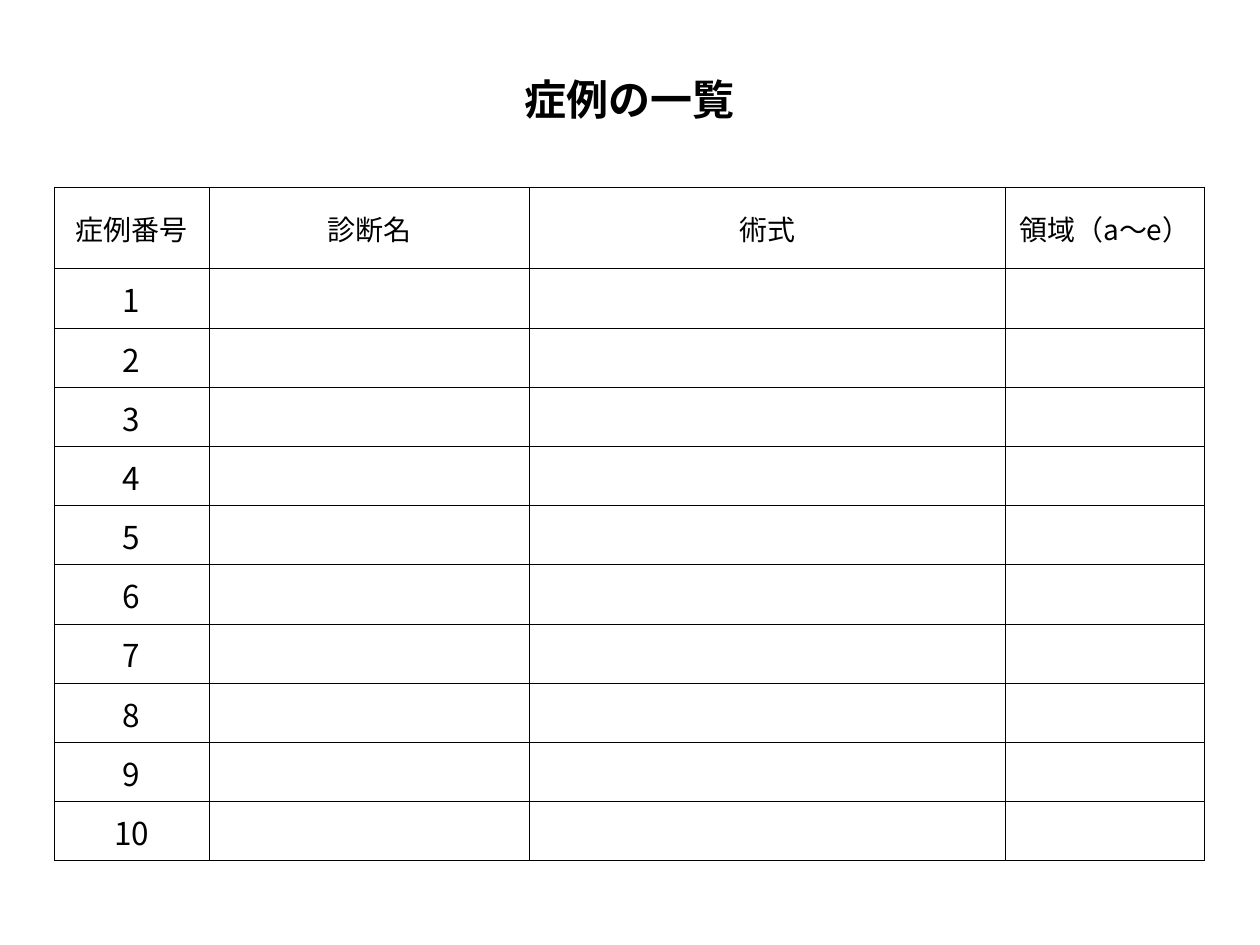
from dataclasses import dataclass

from lxml import etree
from pptx import Presentation
from pptx.dml.color import RGBColor
from pptx.enum.lang import MSO_LANGUAGE_ID
from pptx.enum.text import MSO_ANCHOR, PP_ALIGN
from pptx.oxml.ns import qn
from pptx.util import Inches, Pt

BLACK = RGBColor(0x00, 0x00, 0x00)
FONT_NAME = "Noto Sans CJK JP"
JAPANESE = MSO_LANGUAGE_ID.JAPANESE
CENTER = PP_ALIGN.CENTER
MIDDLE = MSO_ANCHOR.MIDDLE

TITLE = "症例の一覧"
CASE_COUNT = 10
ROW_HEIGHT = 0.47
TITLE_ROW, GAP_ROW, HEADER_ROW = range(3)
ROW_COUNT = HEADER_ROW + 1 + CASE_COUNT
BORDER_SIDES = ("L", "R", "T", "B")


@dataclass(frozen=True)
class Column:
    heading: str
    width: float


COLUMNS = (
    Column("症例番号", 1.23),
    Column("診断名", 2.54),
    Column("術式", 3.78),
    Column("領域（a〜e）", 1.58),
)


def write_cell(cell, text: str, size: int, bold: bool = False) -> None:
    """Put centred text into a cell with narrow margins."""
    cell.margin_left = cell.margin_right = cell.margin_top = Inches(0.01)
    cell.margin_bottom = 0
    cell.vertical_anchor = MIDDLE
    cell.text_frame.text = text
    paragraph = cell.text_frame.paragraphs[0]
    paragraph.alignment = CENTER
    font = paragraph.runs[0].font
    font.name = FONT_NAME
    font.size = Pt(size)
    font.bold = bold
    font.color.rgb = BLACK
    font.language_id = JAPANESE
    properties = paragraph.runs[0]._r.get_or_add_rPr()
    latin = properties.find(qn("a:latin"))
    east_asian = etree.Element(qn("a:ea"), typeface=FONT_NAME)
    latin.addnext(east_asian)


def set_borders(cell, visible_sides: str) -> None:
    """Draw thin lines on the named sides and none on the others."""
    properties = cell._tc.get_or_add_tcPr()
    for position, side in enumerate(BORDER_SIDES):
        line = etree.Element(qn(f"a:ln{side}"), w=str(Pt(0.5)))
        if side in visible_sides:
            fill = etree.SubElement(line, qn("a:solidFill"))
            etree.SubElement(fill, qn("a:srgbClr"), val=str(BLACK))
        else:
            etree.SubElement(line, qn("a:noFill"))
        properties.insert(position, line)


def visible_sides(row_index: int) -> str:
    if row_index == TITLE_ROW:
        return ""
    return "B" if row_index == GAP_ROW else "LRTB"


def add_case_table(slide) -> None:
    width = sum(column.width for column in COLUMNS)
    frame = slide.shapes.add_table(
        ROW_COUNT, len(COLUMNS), Inches(0.43), Inches(0.52),
        Inches(width), Inches(ROW_HEIGHT * ROW_COUNT),
    )
    table = frame.table
    table.first_row = False
    table.horz_banding = False

    # Grid
    for table_column, column in zip(table.columns, COLUMNS):
        table_column.width = Inches(column.width)
    for row_index, row in enumerate(table.rows):
        row.height = Inches(ROW_HEIGHT)
        for cell in row.cells:
            cell.fill.background()
            set_borders(cell, visible_sides(row_index))

    # Title across all columns
    title_cell = table.cell(TITLE_ROW, 0)
    title_cell.merge(table.cell(TITLE_ROW, len(COLUMNS) - 1))
    write_cell(title_cell, TITLE, 24, bold=True)

    # Headings and case numbers
    for column_index, column in enumerate(COLUMNS):
        write_cell(table.cell(HEADER_ROW, column_index), column.heading, 16)
    for number in range(1, CASE_COUNT + 1):
        write_cell(table.cell(HEADER_ROW + number, 0), str(number), 18)


def main() -> None:
    presentation = Presentation()
    presentation.slide_width = Inches(10)
    presentation.slide_height = Inches(7.5)
    # The title is a table cell, so the blank layout is used
    slide = presentation.slides.add_slide(presentation.slide_layouts[6])
    add_case_table(slide)
    presentation.save("out.pptx")


if __name__ == "__main__":
    main()
